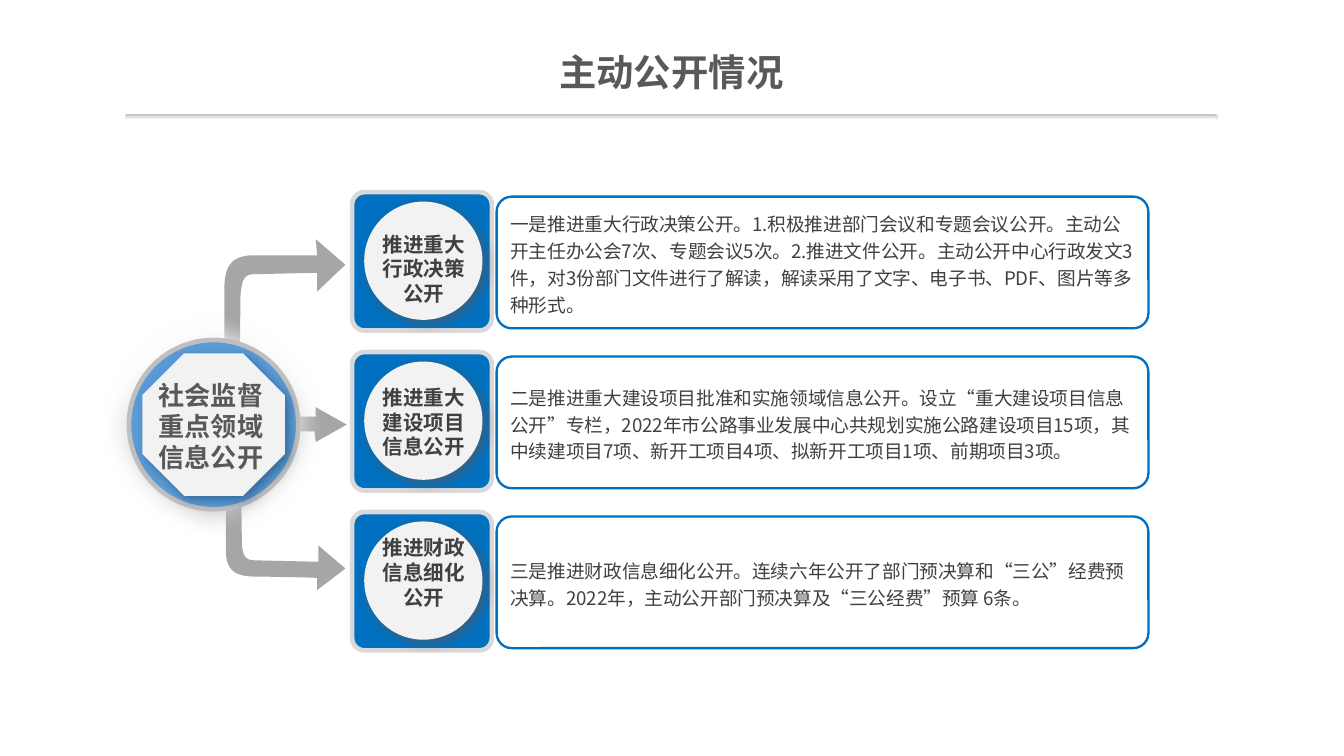
"""Build a slide on proactive disclosure, with one hub leading to three topic cards."""
from lxml.etree import SubElement
from pptx import Presentation
from pptx.dml.color import RGBColor
from pptx.enum.shapes import MSO_SHAPE
from pptx.enum.text import MSO_ANCHOR, PP_ALIGN
from pptx.oxml.ns import qn
from pptx.util import Inches, Pt

COLORS = {
    "blue": "0070C0", "hub": "5B9BD5", "arrow": "A6A6A6", "disc": "F2F2F2",
    "ring": "BFBFBF", "frame": "D9D9D9", "white": "FFFFFF",
    "heading": "595959", "body": "404040", "hub_shadow": "1F4E79",
}
CJK = "Noto Sans CJK SC"

deck = Presentation()
deck.slide_width, deck.slide_height = Inches(10), Inches(10) * 9 // 16
page = deck.slides.add_slide(deck.slide_layouts[6])
column = row = deck.slide_width // 100


def add_block(kind, left, top, width, height, fill=None, line=None, weight=2.5, shadow=None):
    bounds = [int(left * column), int(top * row), int(width * column), int(height * row)]
    if kind is None:
        return page.shapes.add_textbox(*bounds)
    shape = page.shapes.add_shape(kind, *bounds)
    shape.shadow.inherit = False
    if fill:
        shape.fill.solid()
        shape.fill.fore_color.rgb = RGBColor.from_string(COLORS[fill])
    else:
        shape.fill.background()
    if line:
        shape.line.color.rgb = RGBColor.from_string(COLORS[line])
        shape.line.width = Pt(weight)
    else:
        shape.line.fill.background()
    if shadow:
        effects = shape._element.spPr.find(qn("a:effectLst"))
        outer = SubElement(effects, qn("a:outerShdw"), blurRad=str(Pt(6)), dist=str(Pt(3)),
                           dir="2700000", algn="tl", rotWithShape="0")
        tint = SubElement(outer, qn("a:srgbClr"), val=COLORS[shadow])
        SubElement(tint, qn("a:alpha"), val="64000")
    return shape


def write(box, text, size, color, font, bold=False, align=PP_ALIGN.CENTER, anchor=MSO_ANCHOR.MIDDLE):
    frame = box.text_frame
    frame.word_wrap = True
    frame.vertical_anchor = anchor
    paragraph = frame.paragraphs[0]
    paragraph.alignment = align
    span = paragraph.add_run()
    span.text = text
    span.font.size, span.font.bold, span.font.name = Pt(size), bold, font
    span.font.color.rgb = RGBColor.from_string(COLORS[color])
    SubElement(span._r.get_or_add_rPr(), qn("a:ea"), typeface=CJK)
    return paragraph


divider = add_block(MSO_SHAPE.ROUNDED_RECTANGLE, 9.3, 8.5, 81.3, 0.4)
divider.adjustments[0] = 0.5
title = add_block(None, 30.7, 3.25, 38.5, 4.1)
title.text_frame.margin_top = title.text_frame.margin_bottom = Inches(0.04)
write(title, "主动公开情况", 20, "heading", "Arial", True, anchor=MSO_ANCHOR.TOP)

arrows = [
    [[(17.9, 32.9)], [(18, 40.3)], [(18, 41.7), (18.5, 41.7), (19.3, 41.7)], [(23.7, 41.8)],
     [(23.7, 40.6)], [(25.7, 42.3)], [(23.6, 43.9)], [(23.6, 43)],
     [(23.6, 43), (20.7, 42.9), (19, 42.9)], [(17.3, 42.9), (16.8, 42.3), (16.8, 40.8)],
     [(16.8, 32.8)], [(16.9, 31.5), (17.6, 31.6), (17.9, 32.9)]],
    [[(15.1, 32.2)], [(23.4, 32.1)], [(23.5, 32.9)], [(25.8, 31.6)], [(23.5, 30.3)],
     [(23.5, 31)], [(15.1, 31.1)]],
    [[(17.8, 30.6)], [(17.9, 22)], [(18, 20.4), (18.4, 20.4), (19.2, 20.4)], [(23.6, 20.3)],
     [(23.6, 21.7)], [(25.7, 19.7)], [(23.5, 17.8)], [(23.6, 19)],
     [(23.6, 19), (20.6, 19), (18.9, 19)], [(17.3, 19), (16.7, 19.7), (16.7, 21.5)],
     [(16.7, 30.8)], [(16.9, 32.3), (17.6, 32.1), (17.8, 30.6)]],
]
for segments in arrows:
    points = list(segments[0])
    for segment in segments[1:]:
        if len(segment) == 1:
            points += segment
            continue
        controls = [points[-1], *segment]
        for step in range(1, 13):
            t = step / 12
            weights = [(1 - t) ** 3, 3 * t * (1 - t) ** 2, 3 * t ** 2 * (1 - t), t ** 3]
            points.append(tuple(sum(w * p[axis] for w, p in zip(weights, controls)) for axis in (0, 1)))
    outline = [(round(x * 100), round(y * 100)) for x, y in points]
    builder = page.shapes.build_freeform(*outline[0], scale=column / 100)
    builder.add_line_segments(outline[1:], close=True)
    arrow = builder.convert_to_shape()
    arrow.shadow.inherit = False
    arrow.fill.solid()
    arrow.fill.fore_color.rgb = RGBColor.from_string(COLORS["arrow"])
    arrow.line.fill.background()

halo = add_block(MSO_SHAPE.OVAL, 7.2, 22.9, 17.4, 17.4)
SubElement(halo._element.spPr.find(qn("a:effectLst")), qn("a:softEdge"), rad=str(Pt(12.5)))
for shape, colors in ((divider, ("ring", "white")), (halo, ("white", "ring"))):
    shape.fill.gradient()
    shape.fill.gradient_angle = 270
    for stop, color in zip(shape.fill.gradient_stops, colors):
        stop.color.rgb = RGBColor.from_string(COLORS[color])

add_block(MSO_SHAPE.OVAL, 9.6, 25.3, 12.6, 12.6, "hub", "ring")
add_block(MSO_SHAPE.OCTAGON, 10.6, 26.3, 10.6, 10.6, "disc", shadow="hub_shadow")
hub_label = add_block(None, 10.5, 27.7, 10.4, 8.1)
write(hub_label, "社会监督重点领域信息公开", 14, "heading", "Arial", True, anchor=MSO_ANCHOR.TOP)

topics = [
    ("推进重大行政决策公开", 1.7,
     "一是推进重大行政决策公开。1.积极推进部门会议和专题会议公开。主动公开主任办公会7次、专题会议5次。"
     "2.推进文件公开。主动公开中心行政发文3件，对3份部门文件进行了解读，解读采用了文字、电子书、PDF、图片等多种形式。"),
    ("推进重大建设项目信息公开", 1.2,
     "二是推进重大建设项目批准和实施领域信息公开。设立“重大建设项目信息公开”专栏，"
     "2022年市公路事业发展中心共规划实施公路建设项目15项，其中续建项目7项、新开工项目4项、拟新开工项目1项、前期项目3项。"),
    ("推进财政信息细化公开", 0.5,
     "三是推进财政信息细化公开。连续六年公开了部门预决算和“三公”经费预决算。"
     "2022年，主动公开部门预决算及“三公经费”预算 6条。"),
]
for index, (name, label_drop, detail) in enumerate(topics):
    top = 14.3 + 11.9 * index
    panel = add_block(MSO_SHAPE.ROUNDED_RECTANGLE, 36.95, top + 0.33, 48.5, 9.8, line="blue", weight=1.25)
    panel.adjustments[0] = 0.115
    frame = panel.text_frame
    frame.margin_left = frame.margin_right = Inches(0.07)
    frame.margin_top = frame.margin_bottom = Inches(0.03)
    write(panel, detail, 10, "body", CJK, align=PP_ALIGN.LEFT).line_spacing = 1.2
    card = add_block(MSO_SHAPE.ROUNDED_RECTANGLE, 26.2, top, 10.4, 10.3, "blue", "frame")
    card.adjustments[0] = 0.09
    add_block(MSO_SHAPE.OVAL, 27.1, top + 0.7, 8.8, 8.8, "disc", shadow="heading")
    label = add_block(None, 27.35, top + label_drop, 8.4, 8)
    write(label, name, 11, "body", CJK, True)

deck.save("out.pptx")
